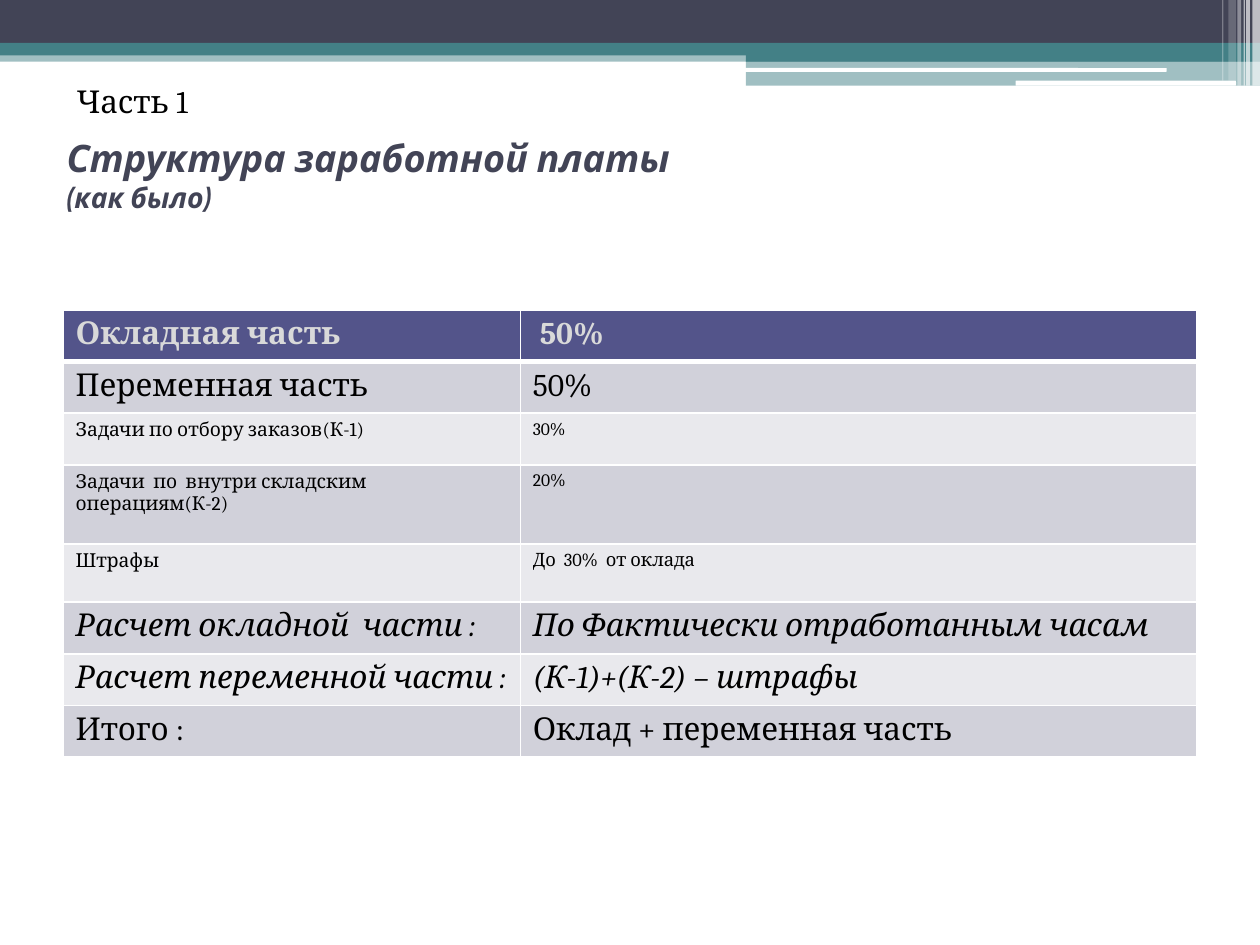
from lxml.etree import SubElement
from pptx import Presentation
from pptx.dml.color import RGBColor
from pptx.enum.shapes import MSO_SHAPE as Shape
from pptx.enum.text import MSO_ANCHOR as Anchor
from pptx.oxml.ns import qn
from pptx.util import Inches, Pt

NAVY, TEAL, WHITE, BLACK = "424456", "438086", "FFFFFF", "000000"
HEADER, DARK_BAND, LIGHT_BAND = "53548A", "D1D1DA", "E9E9ED"


def paint(fill, color, opacity=100):
    fill.solid()
    fill.fore_color.rgb = RGBColor.from_string(color)
    if opacity < 100:
        tint = fill._xPr.find(qn("a:solidFill"))[0]
        SubElement(tint, qn("a:alpha"), val=str(opacity * 1000))


def write(para, text, color, **formats):
    span = para.add_run()
    span.text = text
    for key, value in formats.items():
        setattr(span.font, key, value)
    paint(span.font.fill, color)


deck = Presentation()
deck.slide_width, deck.slide_height = Inches(10), Inches(7.5)
page = deck.slides.add_slide(deck.slide_layouts[6])

# Header bands, white rules and the stripes at the right edge
RECT, ROUND = Shape.RECTANGLE, Shape.ROUNDED_RECTANGLE
bands = [
    (RECT, 0, 0.4, 10, 0.09, TEAL, 50),
    (RECT, 0, 0, 10, 0.34, NAVY, 100),
    (RECT, 0, 0.34, 10, 0.1, TEAL, 100),
    (RECT, 5.92, 0.39, 4.08, 0.1, TEAL, 100),
    (RECT, 5.92, 0.48, 4.08, 0.2, TEAL, 50),
    (ROUND, 5.91, 0.54, 3.35, 0.03, WHITE, 100),
    (ROUND, 8.06, 0.64, 1.75, 0.04, WHITE, 100),
]
stripes = [
    (9.94, 0.06, 0.68, 65),
    (9.89, 0.03, 0.68, 65),
    (9.87, 0.01, 0.68, 60),
    (9.82, 0.03, 0.68, 40),
    (9.75, 0.06, 0.64, 20),
    (9.7, 0.01, 0.64, 30),
]
bands += [(RECT, left, 0, width, height, WHITE, opacity)
          for left, width, height, opacity in stripes]
for kind, left, top, width, height, color, opacity in bands:
    band = page.shapes.add_shape(
        kind, Inches(left), Inches(top), Inches(width), Inches(height))
    band.shadow.inherit = False
    band.line.fill.background()
    paint(band.fill, color, opacity)

# Title
title = page.shapes.add_textbox(
    Inches(0.43), Inches(1.07), Inches(9.08), Inches(0.63)).text_frame
title.word_wrap = True
title.vertical_anchor = Anchor.MIDDLE
para = title.paragraphs[0]
title_format = {"name": "Cabin", "bold": True, "italic": True}
write(para, "Структура заработной платы ", NAVY, size=Pt(21.6), **title_format)
para.add_line_break()
write(para, "(как было)", NAVY, size=Pt(16.2), **title_format)

# Salary table: left text, right text, row height, left size, right size, italic
rows = [
    ("Окладная часть", " 50%", 0.41, 18, 18, False),
    ("Переменная часть", "50%", 0.41, 18, 18, False),
    ("Задачи по отбору заказов(К-1)", "30%", 0.41, 11, 10, False),
    ("Задачи  по  внутри складским операциям(К-2)", "20%", 0.63, 11, 10, False),
    ("Штрафы", "До  30%  от оклада", 0.46, 11, 10.5, False),
    ("Расчет окладной  части :", "По Фактически отработанным часам",
     0.41, 18, 18, True),
    ("Расчет переменной части :", "(К-1)+(К-2) – штрафы", 0.41, 18, 18, True),
    ("Итого :", "Оклад + переменная часть", 0.41, 18, 18, False),
]
table = page.shapes.add_table(
    len(rows), 2, Inches(0.5), Inches(2.46), Inches(9),
    Inches(sum(row[2] for row in rows))).table
table.columns[0].width, table.columns[1].width = Inches(3.63), Inches(5.37)

for index, (left, right, height, left_size, right_size, italic) in enumerate(rows):
    table.rows[index].height = Inches(height)
    is_header = index == 0
    background = HEADER if is_header else DARK_BAND if index % 2 else LIGHT_BAND
    borders = {"lnL": 1, "lnR": 1,
               "lnT": 3 if index == 1 else 1, "lnB": 3 if is_header else 1}
    for column, (text, size) in enumerate([(left, left_size), (right, right_size)]):
        cell = table.cell(index, column)
        properties = cell._tc.get_or_add_tcPr()
        for side, weight in borders.items():
            line = SubElement(properties, qn(f"a:{side}"), w=str(Pt(weight)))
            solid = SubElement(line, qn("a:solidFill"))
            SubElement(solid, qn("a:srgbClr"), val=WHITE)
        paint(cell.fill, background)
        write(cell.text_frame.paragraphs[0], text,
              "D9D9D9" if is_header else BLACK,
              name="Cambria", size=Pt(size), bold=is_header, italic=italic)

# Part label
label = page.shapes.add_textbox(
    Inches(0.51), Inches(0.6), Inches(2.83), Inches(0.4)).text_frame
label.word_wrap = True
write(label.paragraphs[0], "Часть 1", BLACK, name="Cambria", size=Pt(18))

deck.save("out.pptx")
